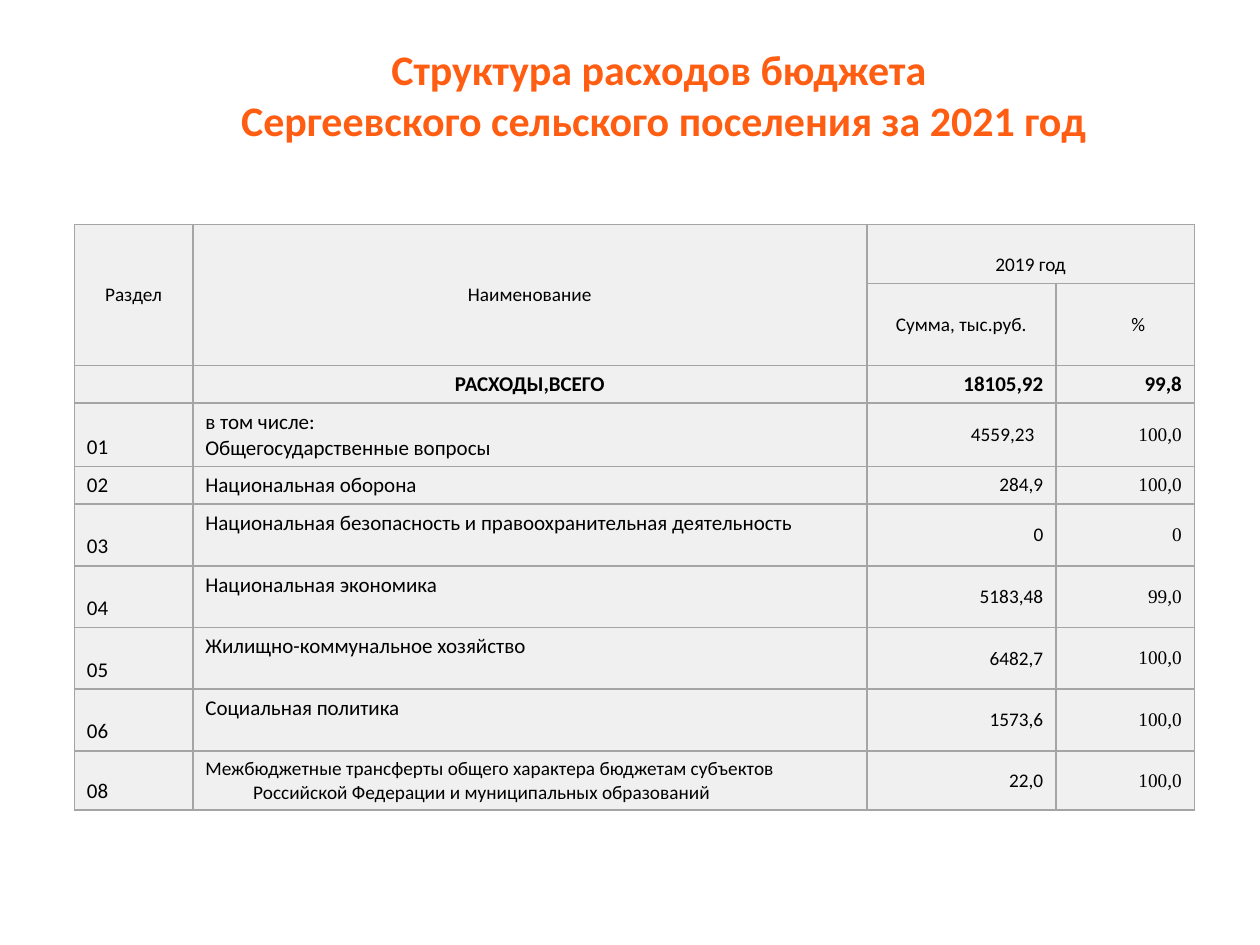
from dataclasses import dataclass
from itertools import accumulate

from lxml.etree import SubElement
from pptx import Presentation
from pptx.dml.color import RGBColor
from pptx.enum.text import MSO_ANCHOR as Anchor, PP_ALIGN as Align
from pptx.oxml.ns import qn
from pptx.util import Inches, Pt

ORANGE = RGBColor(0xFF, 0x5D, 0x12)
BLACK = RGBColor(0x00, 0x00, 0x00)
CELL_GREY = RGBColor(0xF0, 0xF0, 0xF0)
BORDER_GREY = RGBColor(0xA5, 0xA5, 0xA5)
SANS, SERIF = "Calibri", "Times New Roman"

PAGE_WIDTH, PAGE_HEIGHT = Inches(10), Inches(7.5)
TABLE_LEFT, TABLE_TOP = 0.59, 1.78
COLUMN_WIDTHS = [0.94, 5.35, 1.5, 1.1]
ROW_HEIGHTS = [0.47, 0.65, 0.3, 0.5, 0.3] + [0.49] * 4 + [0.47]
HANG = 0.38  # hanging indent of the names, inches


@dataclass
class Style:
    align: Align = Align.LEFT
    anchor: Anchor = Anchor.MIDDLE
    size: float = 11
    name: str = SANS
    bold: bool = False
    left: float = 0  # paragraph margin, inches
    hang: float = 0  # first line set back, inches
    inset_right: float = 0.1


@dataclass
class Expense:
    section: str
    title: str
    amount: str
    percent: str
    anchor: Anchor = Anchor.TOP
    size: float = 12
    amount_inset: float = 0.1


EXPENSES = [
    Expense("01", "в том числе:\nОбщегосударственные вопросы", "4559,23", "100,0",
            Anchor.MIDDLE, amount_inset=0.17),
    Expense("02", "Национальная оборона", "284,9", "100,0", Anchor.MIDDLE),
    Expense("03", "Национальная безопасность и правоохранительная деятельность", "0", "0"),
    Expense("04", "Национальная экономика", "5183,48", "99,0"),
    Expense("05", "Жилищно-коммунальное хозяйство", "6482,7", "100,0"),
    Expense("06", "Социальная политика", "1573,6", "100,0"),
    Expense("08", "Межбюджетные трансферты общего характера бюджетам субъектов "
            "Российской Федерации и муниципальных образований", "22,0", "100,0",
            Anchor.MIDDLE, size=11),
]


def format_font(font, color: RGBColor, **values) -> None:
    for key, value in values.items():
        setattr(font, key, value)
    font.color.rgb = color


def style_cell(cell) -> None:
    """Grey fill and a thin border on all four sides."""
    cell.fill.solid()
    cell.fill.fore_color.rgb = CELL_GREY
    properties = cell._tc.get_or_add_tcPr()
    for index, side in enumerate(("lnL", "lnR", "lnT", "lnB")):
        line = properties.makeelement(qn(f"a:{side}"), {"w": str(Pt(1))})
        solid = SubElement(line, qn("a:solidFill"))
        SubElement(solid, qn("a:srgbClr"), val=str(BORDER_GREY))
        properties.insert(index, line)


def write_cell(cell, text: str, style: Style) -> None:
    cell.vertical_anchor = style.anchor
    cell.margin_right = Inches(style.inset_right)
    cell.text_frame.text = text
    for para in cell.text_frame.paragraphs:
        para.alignment = style.align
        properties = para._p.get_or_add_pPr()
        properties.set("marL", str(Inches(style.left)))
        properties.set("indent", str(-Inches(style.hang)))
        for span in para.runs:
            format_font(span.font, BLACK, size=Pt(style.size), name=style.name, bold=style.bold)
        if not para.runs:  # keeps an empty cell as low as its row
            SubElement(para._p, qn("a:endParaRPr"), sz=str(int(style.size * 100)))


def add_title(page) -> None:
    box = page.shapes.add_textbox(int(PAGE_WIDTH * 0.098), int(PAGE_HEIGHT * 0.037),
                                  int(PAGE_WIDTH * 0.85), int(PAGE_HEIGHT * 0.167))
    frame = box.text_frame
    frame.word_wrap = True
    frame.margin_top = Inches(0.07)
    para = frame.paragraphs[0]
    para.text = "Структура расходов бюджета\v Сергеевского сельского поселения за 2021 год"
    para.alignment = Align.CENTER
    for span in para.runs:
        format_font(span.font, ORANGE, size=Pt(24), name=SANS, bold=True)


def add_budget_table(page) -> None:
    *_, width = accumulate(COLUMN_WIDTHS)
    *_, height = accumulate(ROW_HEIGHTS)
    table = page.shapes.add_table(
        len(ROW_HEIGHTS), len(COLUMN_WIDTHS), Inches(TABLE_LEFT), Inches(TABLE_TOP),
        Inches(width), Inches(height)).table
    table.first_row = table.horz_banding = False
    for column, size in zip(table.columns, COLUMN_WIDTHS):
        column.width = Inches(size)
    for row, size in zip(table.rows, ROW_HEIGHTS):
        row.height = Inches(size)
    for cell in table.iter_cells():
        style_cell(cell)

    # Two-level header
    table.cell(0, 0).merge(table.cell(1, 0))
    table.cell(0, 1).merge(table.cell(1, 1))
    table.cell(0, 2).merge(table.cell(0, 3))
    center = Style(Align.CENTER)
    write_cell(table.cell(0, 0), "Раздел", center)
    write_cell(table.cell(0, 1), "Наименование", center)
    write_cell(table.cell(0, 2), "2019 год", Style(Align.CENTER, Anchor.BOTTOM))
    write_cell(table.cell(1, 2), "Сумма, тыс.руб.", center)
    write_cell(table.cell(1, 3), "%", Style(left=0.88, hang=HANG))

    # Total
    total = ["", "РАСХОДЫ,ВСЕГО", "18105,92", "99,8"]
    aligns = [Align.LEFT, Align.CENTER, Align.RIGHT, Align.RIGHT]
    for column, (text, align) in enumerate(zip(total, aligns)):
        write_cell(table.cell(2, column), text, Style(align, Anchor.BOTTOM, 12, bold=True))

    # Sections of the budget
    for row, item in enumerate(EXPENSES, start=3):
        write_cell(table.cell(row, 0), item.section, Style(anchor=Anchor.BOTTOM, size=12))
        write_cell(table.cell(row, 1), item.title,
                   Style(anchor=item.anchor, size=item.size, left=HANG, hang=HANG))
        write_cell(table.cell(row, 2), item.amount,
                   Style(Align.RIGHT, inset_right=item.amount_inset))
        write_cell(table.cell(row, 3), item.percent, Style(Align.RIGHT, name=SERIF))


def main() -> None:
    deck = Presentation()
    deck.slide_width, deck.slide_height = PAGE_WIDTH, PAGE_HEIGHT
    page = deck.slides.add_slide(deck.slide_layouts[6])
    add_title(page)
    add_budget_table(page)
    deck.save("out.pptx")


if __name__ == "__main__":
    main()
